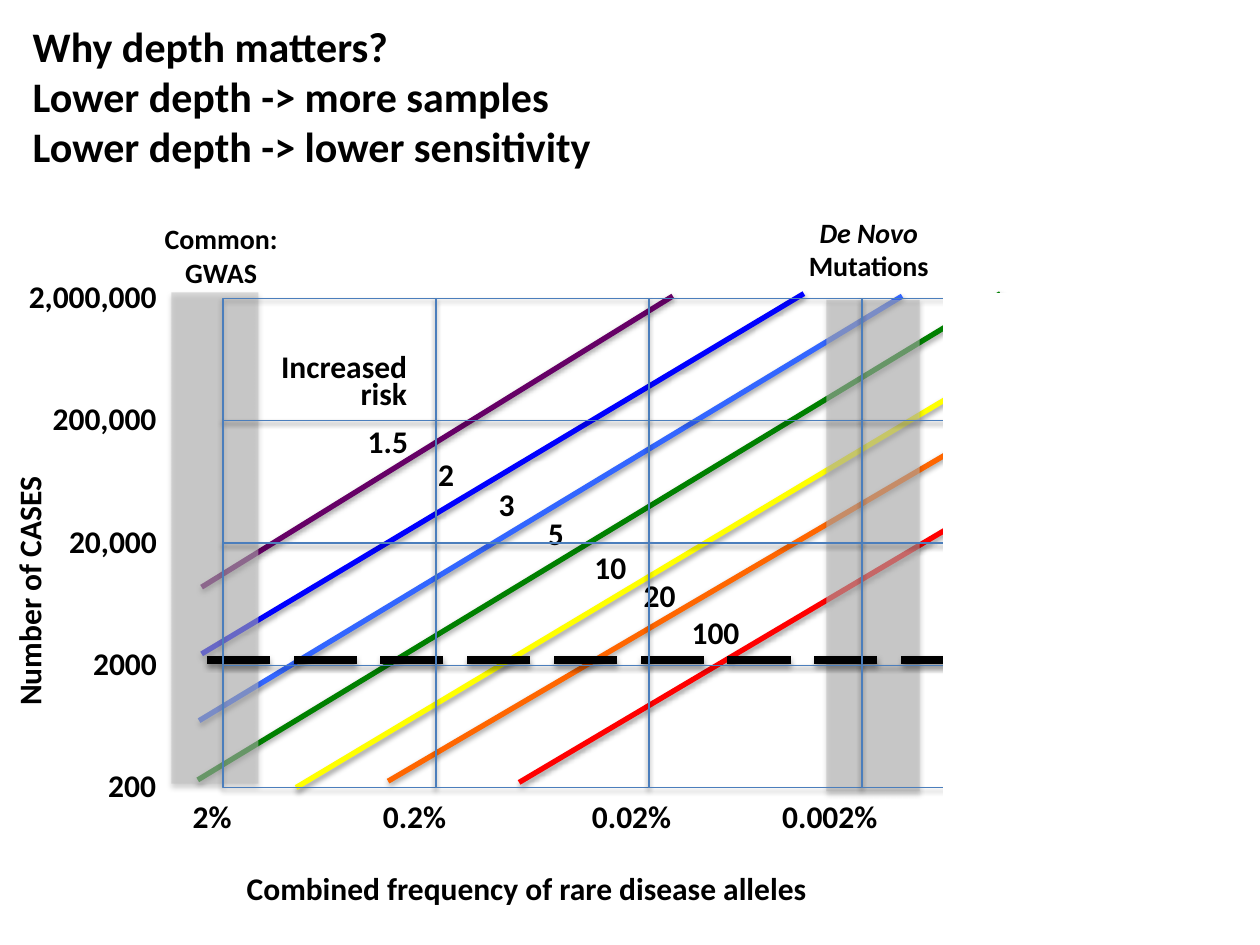
from lxml.etree import SubElement
from pptx import Presentation
from pptx.dml.color import RGBColor
from pptx.enum.dml import MSO_LINE
from pptx.enum.shapes import MSO_CONNECTOR, MSO_SHAPE
from pptx.enum.text import MSO_ANCHOR, MSO_AUTO_SIZE, PP_ALIGN
from pptx.oxml.ns import qn
from pptx.util import Inches, Pt

# Content
COLORS = {
    "text": "000000", "band": "BFBFBF", "grid": "4B7EBC", "cover": "FFFFFF",
    "purple": "660066", "blue": "0000FF", "sky": "3366FF", "green": "008000",
    "yellow": "FFFF00", "orange": "FF6600", "red": "FF0000",
}
TITLE = ["Why depth matters?", "Lower depth -> more samples",
         "Lower depth -> lower sensitivity"]
CASES = [("2,000,000", 1.22), ("200,000", 1.03), ("20,000", 0.9),
         ("2000", 0.71), ("200", 0.59)]                    # text, width
FREQUENCIES = [("2%", 1.43, 0.51), ("0.2%", 2.94, 0.71),
               ("0.02%", 4.6, 0.83), ("0.002%", 6.11, 0.96)]  # text, left, width
RISK_LINES = [  # colour, start, end
    ("purple", (1.6, 4.66), (5.34, 2.35)),
    ("blue", (1.6, 5.19), (6.38, 2.33)),
    ("sky", (1.58, 5.72), (7.16, 2.35)),
    ("green", (1.57, 6.19), (7.94, 2.33)),
    ("yellow", (2.35, 6.25), (8.34, 2.67)),
    ("orange", (3.08, 6.2), (8.34, 3.12)),
    ("red", (4.12, 6.21), (8.34, 3.71)),
]
RISK_LABELS = [  # text, left, top, width
    ("1.5", 2.82, 3.3, 0.52), ("2", 3.38, 3.56, 0.33), ("3", 3.86, 3.8, 0.33),
    ("5", 4.25, 4.03, 0.33), ("10", 4.62, 4.3, 0.46), ("20", 5.01, 4.52, 0.46),
    ("100", 5.39, 4.82, 0.59),
]
BANDS = [(1.36, 2.32, 0.69, 3.9), (6.56, 2.38, 0.74, 3.9)]
BAND_LABELS = [  # lines, box, first line italic
    (["Common:", "GWAS"], (1.2, 1.71, 1.11, 0.64), False),
    (["De Novo", "Mutations"], (6.31, 1.66, 1.17, 0.64), True),
]

# Plot grid
COLS, ROWS = 4, 4
LEFT, TOP, CELL_W, CELL_H = 1.77, 2.37, 1.69, 0.97
LABEL_H, CASES_RIGHT = 0.4, 1.35

prs = Presentation()
prs.slide_width, prs.slide_height = Inches(10), Inches(7.5)
slide = prs.slides.add_slide(prs.slide_layouts[5])


def rgb(name):
    return RGBColor.from_string(COLORS[name])


def place(box):
    return [Inches(v) for v in box]


def write(s, lines, size, align=PP_ALIGN.LEFT, spacing=None, italic_first=False):
    tf = s.text_frame
    tf.word_wrap = False
    tf.auto_size = MSO_AUTO_SIZE.SHAPE_TO_FIT_TEXT
    tf.vertical_anchor = MSO_ANCHOR.TOP
    for i, line in enumerate(lines):
        p = tf.add_paragraph() if i else tf.paragraphs[0]
        p.alignment = align
        if spacing:
            p.line_spacing = spacing
        r = p.add_run()
        r.text = line
        r.font.name, r.font.size, r.font.bold = "Calibri", Pt(size), True
        r.font.italic = italic_first and i == 0
        r.font.color.rgb = rgb("text")


def label(lines, box, size=18, **style):
    s = slide.shapes.add_textbox(*place(box))
    write(s, lines, size, **style)
    return s


def add_shadow(s, alpha, dist):
    sp_pr = s._element.spPr
    effects = sp_pr.find(qn("a:effectLst"))
    if effects is None:
        effects = SubElement(sp_pr, qn("a:effectLst"))
    shadow = SubElement(effects, qn("a:outerShdw"), blurRad=str(Pt(3.1)),
                        dist=str(Pt(dist)), dir="5400000", rotWithShape="0")
    color = SubElement(shadow, qn("a:srgbClr"), val="000000")
    SubElement(color, qn("a:alpha"), val=str(alpha * 1000))


def rect(box, fill=None, line=None, shadow=True, opacity=100):
    s = slide.shapes.add_shape(MSO_SHAPE.RECTANGLE, *place(box))
    s.shadow.inherit = False
    if fill:
        s.fill.solid()
        s.fill.fore_color.rgb = rgb(fill)
        if opacity < 100:
            color = s._element.spPr.find(qn("a:solidFill"))[0]
            SubElement(color, qn("a:alpha"), val=str(opacity * 1000))
    else:
        s.fill.background()
    if line:
        s.line.color.rgb = rgb(line)
        s.line.width = Pt(0.75)
    else:
        s.line.fill.background()
    if shadow:
        add_shadow(s, 35, 1.8)


def connect(color, start, end, width=3, dash=None):
    s = slide.shapes.add_connector(MSO_CONNECTOR.STRAIGHT, *place(start + end))
    s.line.color.rgb = rgb(color)
    s.line.width = Pt(width)
    if dash:
        s.line.dash_style = dash
    add_shadow(s, 38, 1.6)


# Title
title = slide.shapes.title
title.left, title.top, title.width, title.height = place((0.16, 0.11, 4.69, 1.31))
write(title, TITLE, 24)

# Frequency labels, risk lines and their values
for text, left, width in FREQUENCIES:
    label([text], (left, 6.28, width, LABEL_H))
for color, start, end in RISK_LINES:
    connect(color, start, end)
for text, left, top, width in RISK_LABELS:
    label([text], (left, top, width, LABEL_H))

# Case counts, one per grid line
for i, (text, width) in enumerate(CASES):
    label([text], (CASES_RIGHT - width, TOP - 0.22 + i * CELL_H, width, LABEL_H))

# Axis titles and legend heading
label(["Number of CASES"], (-0.79, 4.48, 2.04, LABEL_H)).rotation = 270
label(["Combined frequency of rare disease alleles"], (1.86, 6.85, 4.7, LABEL_H))
label(["Increased ", "risk"], (2.11, 2.79, 1.22, 0.54),
      align=PP_ALIGN.RIGHT, spacing=0.7)

# Shaded bands with headings
for box in BANDS:
    rect(box, fill="band", opacity=54)
for lines, box, italic in BAND_LABELS:
    label(lines, box, 16, align=PP_ALIGN.CENTER, italic_first=italic)

# Dashed threshold
connect("text", (8.34, 5.24), (1.6, 5.24), 4.5, MSO_LINE.LONG_DASH)

# Grid cells: first column, then the others row by row
cells = [(0, r) for r in range(ROWS)]
cells += [(c, r) for r in range(ROWS) for c in range(1, COLS)]
for c, r in cells:
    rect((LEFT + c * CELL_W, TOP + r * CELL_H, CELL_W, CELL_H), line="grid")

# White edge that ends the plot on the right
rect((7.49, 2.33, 1.37, 4.01), fill="cover", line="cover", shadow=False)

prs.save("out.pptx")
